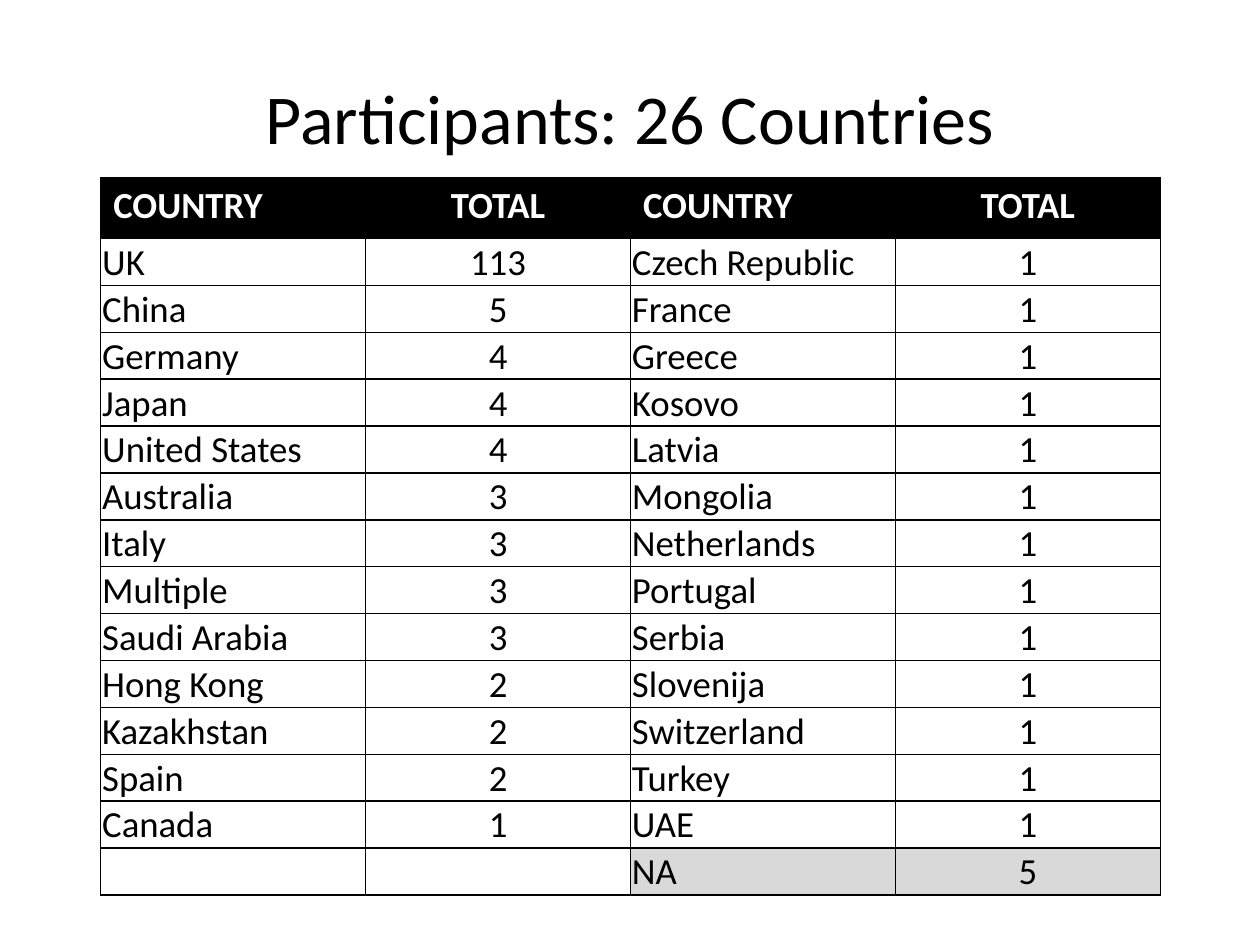
"""Build the slide that lists participants by country."""
from dataclasses import dataclass
from typing import Any

import pptx
import pptx.dml.color
import pptx.enum.text
import pptx.oxml
import pptx.oxml.ns
import pptx.util

Cm = pptx.util.Cm
Pt = pptx.util.Pt
ALIGN = pptx.enum.text.PP_ALIGN
ANCHOR = pptx.enum.text.MSO_ANCHOR

FONT = "Calibri"
BLACK, WHITE, GREY = "000000", "FFFFFF", "D9D9D9"
COLUMN_WIDTH = 5.34
TABLE_HEIGHT = 14.47
HEADER_HEIGHT = 1.23
BODY_CELL = {
    "margin_left": Cm(0.03),
    "margin_right": Cm(0.03),
    "margin_top": Cm(0.03),
    "margin_bottom": Cm(0),
    "vertical_anchor": ANCHOR.MIDDLE,
}


@dataclass
class Entry:
    country: str = ""
    total: str = ""
    fill: str = WHITE


LEFT = [
    Entry("UK", "113"), Entry("China", "5"), Entry("Germany", "4"),
    Entry("Japan", "4"), Entry("United States", "4"), Entry("Australia", "3"),
    Entry("Italy", "3"), Entry("Multiple", "3"), Entry("Saudi Arabia", "3"),
    Entry("Hong Kong", "2"), Entry("Kazakhstan", "2"), Entry("Spain", "2"),
    Entry("Canada", "1"), Entry(),
]
SINGLES = [
    "Czech Republic", "France", "Greece", "Kosovo", "Latvia", "Mongolia",
    "Netherlands", "Portugal", "Serbia", "Slovenija", "Switzerland", "Turkey", "UAE",
]
RIGHT = [Entry(name, "1") for name in SINGLES] + [Entry("NA", "5", GREY)]


def color(value: str) -> pptx.dml.color.RGBColor:
    return pptx.dml.color.RGBColor.from_string(value)


def apply(target: Any, values: dict[str, Any]) -> None:
    for name, value in values.items():
        setattr(target, name, value)


def write(frame: Any, text: str, size: float, ink: str, align: Any, bold: bool = False) -> None:
    para = frame.paragraphs[0]
    para.alignment = align
    if text:
        span = para.add_run()
        span.text = text
        apply(span.font, {"name": FONT, "size": Pt(size), "bold": bold})
        span.font.color.rgb = color(ink)


def add_borders(cell: Any, widths: dict[str, float]) -> None:
    properties = cell._tc.get_or_add_tcPr()
    for side, width in widths.items():
        properties.append(pptx.oxml.parse_xml(
            f'<a:ln{side} {pptx.oxml.ns.nsdecls("a")} w="{Pt(width)}">'
            f'<a:solidFill><a:srgbClr val="{BLACK}"/></a:solidFill></a:ln{side}>'))


def draw_cell(cell: Any, text: str, fill: str, column: int, header: bool) -> None:
    widths = {
        "L": 0.75 if header and column == 0 else 1,
        "R": 0.75 if header and column == 3 else 1,
        "T": 0.75 if header else 1,
        "B": 1,
    }
    add_borders(cell, widths)
    cell.fill.solid()
    cell.fill.fore_color.rgb = color(fill)
    if not header:
        apply(cell, BODY_CELL)
    align = ALIGN.CENTER if column % 2 else ALIGN.LEFT
    write(cell.text_frame, text, 21, WHITE if header else BLACK, align, header)


def draw_title(page: Any, text: str) -> None:
    box = page.shapes.add_textbox(Cm(1.27), Cm(0.76), Cm(22.86), Cm(3.18))
    apply(box.text_frame, {"word_wrap": True, "vertical_anchor": ANCHOR.MIDDLE})
    write(box.text_frame, text, 40, BLACK, ALIGN.CENTER)


def draw_table(page: Any, left: list[Entry], right: list[Entry]) -> None:
    heading = Entry("COUNTRY", "TOTAL", BLACK)
    rows = [(heading, heading), *zip(left, right)]
    table = page.shapes.add_table(
        len(rows), 4, Cm(2.03), Cm(3.58), Cm(4 * COLUMN_WIDTH), Cm(TABLE_HEIGHT)).table
    table.horz_banding = False
    for column in table.columns:
        column.width = Cm(COLUMN_WIDTH)
    body_height = (TABLE_HEIGHT - HEADER_HEIGHT) / len(left)
    for number, pair in enumerate(rows):
        header = number == 0
        table.rows[number].height = Cm(HEADER_HEIGHT if header else body_height)
        for half, entry in enumerate(pair):
            for offset, text in enumerate((entry.country, entry.total)):
                column = 2 * half + offset
                draw_cell(table.cell(number, column), text, entry.fill, column, header)


def main() -> None:
    deck = pptx.Presentation()
    apply(deck, {"slide_width": Cm(25.4), "slide_height": Cm(19.05)})
    page = deck.slides.add_slide(deck.slide_layouts[6])
    draw_title(page, "Participants: 26 Countries")
    draw_table(page, LEFT, RIGHT)
    deck.save("out.pptx")


if __name__ == "__main__":
    main()
